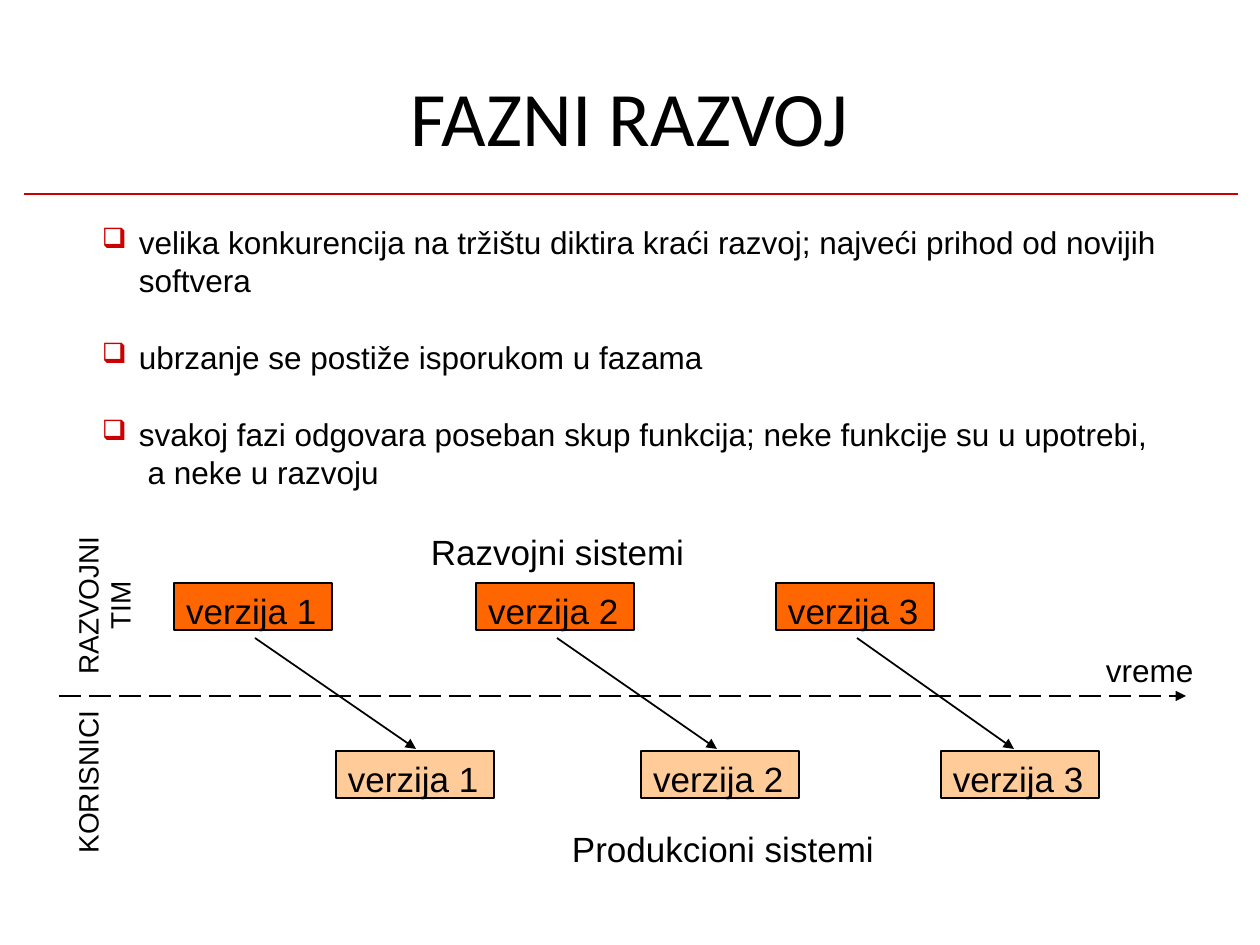
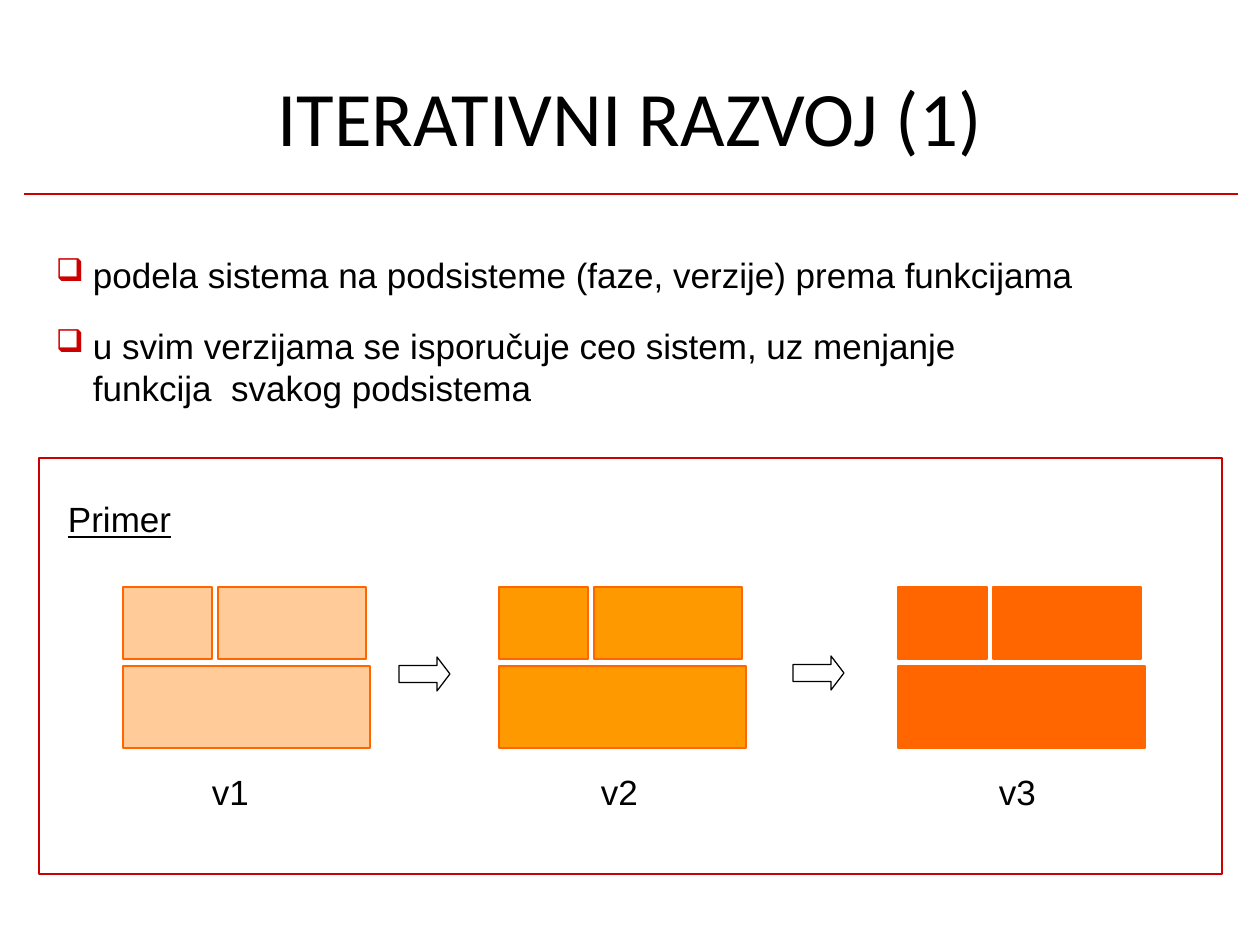
from lxml.etree import SubElement
from pptx import Presentation
from pptx.dml.color import RGBColor
from pptx.enum.dml import MSO_LINE
from pptx.enum.shapes import MSO_CONNECTOR, MSO_SHAPE
from pptx.enum.text import MSO_ANCHOR, PP_ALIGN
from pptx.oxml.ns import qn
from pptx.util import Emu, Pt

BLACK = RGBColor(0x00, 0x00, 0x00)
WHITE = RGBColor(0xFF, 0xFF, 0xFF)
RED = RGBColor(0xCC, 0x00, 0x00)
ORANGE = RGBColor(0xFF, 0x66, 0x00)
AMBER = RGBColor(0xFF, 0x99, 0x00)
PEACH = RGBColor(0xFF, 0xCC, 0x99)

PHASED_TITLE = "FAZNI RAZVOJ"
PHASED_POINTS = [
    "velika konkurencija na tržištu diktira kraći razvoj; najveći prihod od novijih\vsoftvera",
    "ubrzanje se postiže isporukom u fazama",
    "svakoj fazi odgovara poseban skup funkcija; neke funkcije su u upotrebi,\v a neke u razvoju",
]
PHASED_LABELS = [
    ("Razvojni sistemi", (431, 530, 300, 44), 20),
    ("Produkcioni sistemi", (572, 827, 305, 44), 20),
    ("vreme", (1106, 651, 91, 39), 18),
]
SIDE_LABELS = [
    ("RAZVOJNI\nTIM", (72, 535, 64, 141)),
    ("KORISNICI", (72, 709, 30, 146)),
]
VERSIONS = [
    ("verzija 1", 174, 336, 416),
    ("verzija 2", 476, 641, 717),
    ("verzija 3", 776, 941, 1014),
]
VERSION_SIZE = (158, 47)
DEVELOPMENT_TOP, PRODUCTION_TOP = 583, 751
TIME_AXIS = (59, 696, 1186, 696)

ITERATIVE_TITLE = "ITERATIVNI RAZVOJ (1)"
ITERATIVE_POINTS = [
    "podela sistema na podsisteme (faze, verzije) prema funkcijama",
    "u svim verzijama se isporučuje ceo sistem, uz menjanje\vfunkcija  svakog podsistema",
]
EXAMPLE_FRAME = (39, 458, 1183, 416)
ITERATIONS = [
    ("v1", PEACH, 123, 212),
    ("v2", AMBER, 499, 601),
    ("v3", ORANGE, 898, 999),
]
SUBSYSTEMS = [(0, 0, 89, 72), (95, 0, 148, 72), (0, 79, 247, 82)]
SUBSYSTEMS_TOP = 587
STEP_ARROWS = [(399, 657, 51, 34), (793, 656, 51, 34)]


def px(length):
    return Emu(round(length * 914400 / 126))


def add_bullet(para, percent):
    properties = para._p.get_or_add_pPr()
    properties.set("marL", str(px(39)))
    properties.set("indent", str(px(-37)))
    color = SubElement(properties, qn("a:buClr"))
    SubElement(color, qn("a:srgbClr"), val=str(RED))
    SubElement(properties, qn("a:buSzPct"), val=str(percent * 1000))
    SubElement(properties, qn("a:buChar"), char="❑")


def write(shape, text, size=20, font="Arial", align=PP_ALIGN.LEFT, anchor=MSO_ANCHOR.TOP,
          top_inset=0, left_inset=0, leading=None, gap=0, bullet=None,
          underline=None, vertical=False):
    frame = shape.text_frame
    frame.word_wrap = True
    frame.vertical_anchor = anchor
    frame.margin_left, frame.margin_top = px(left_inset), px(top_inset)
    frame.margin_right = frame.margin_bottom = 0
    if vertical:
        shape.element.txBody.bodyPr.set("vert", "vert270")
    for index, line in enumerate(text.split("\n")):
        para = frame.add_paragraph() if index else frame.paragraphs[0]
        para.text = line
        para.alignment = align
        if leading:
            para.line_spacing = Pt(leading)
        if gap and index:
            para.space_before = Pt(gap)
        if bullet:
            add_bullet(para, bullet)
        for span in para.runs:
            span.font.size = Pt(size)
            span.font.name = font
            span.font.color.rgb = BLACK
            span.font.underline = underline


def add_text(page, text, area, **style):
    box = page.shapes.add_textbox(*map(px, area))
    write(box, text, **style)
    return box


def add_block(page, area, fill=None, line=BLACK, kind=MSO_SHAPE.RECTANGLE):
    block = page.shapes.add_shape(kind, *map(px, area))
    block.shadow.inherit = False
    if fill is None:
        block.fill.background()
    else:
        block.fill.solid()
        block.fill.fore_color.rgb = fill
    block.line.color.rgb = line
    block.line.width = Pt(0.72)
    return block


def add_line(page, ends, color=BLACK, width=1, dash=None, arrow=False):
    connector = page.shapes.add_connector(MSO_CONNECTOR.STRAIGHT, *map(px, ends))
    connector.line.color.rgb = color
    connector.line.width = Pt(width)
    if dash:
        connector.line.dash_style = dash
    properties = connector.element.spPr
    if arrow:
        SubElement(properties.find(qn("a:ln")), qn("a:tailEnd"), type="triangle")
    SubElement(properties, qn("a:effectLst"))


def add_page(deck, title):
    page = deck.slides.add_slide(deck.slide_layouts[6])
    add_text(page, title, (63, 69, 1134, 93), size=44, font="Calibri",
             align=PP_ALIGN.CENTER, anchor=MSO_ANCHOR.MIDDLE)
    add_line(page, (24, 194, 1238, 194), RED, 0.96)
    return page


def build_phased(deck):
    page = add_page(deck, PHASED_TITLE)
    add_text(page, "\n".join(PHASED_POINTS), (100, 222, 1070, 270),
             size=18, leading=21.9, gap=22.1, bullet=89)
    for text, area, size in PHASED_LABELS:
        add_text(page, text, area, size=size)
    for text, area in SIDE_LABELS:
        add_text(page, text, area, size=16, leading=18.4, align=PP_ALIGN.CENTER, vertical=True)
    for name, development_left, production_left, tip in VERSIONS:
        for left, top, fill in ((development_left, DEVELOPMENT_TOP, ORANGE),
                                (production_left, PRODUCTION_TOP, PEACH)):
            block = add_block(page, (left, top, *VERSION_SIZE), fill)
            write(block, name, top_inset=6, left_inset=12)
        add_line(page, (development_left + 81, 638, tip, 749), arrow=True)
    add_line(page, TIME_AXIS, width=1.56, dash=MSO_LINE.LONG_DASH, arrow=True)


def build_iterative(deck):
    page = add_page(deck, ITERATIVE_TITLE)
    add_text(page, "\n".join(ITERATIVE_POINTS), (54, 253, 1060, 160),
             leading=24, gap=16.8, bullet=90)
    add_block(page, EXAMPLE_FRAME, line=RED)
    add_text(page, "Primer", (68, 498, 150, 43), leading=23.8, underline=True)
    for name, fill, left, label_left in ITERATIONS:
        for x, y, width, height in SUBSYSTEMS:
            add_block(page, (left + x, SUBSYSTEMS_TOP + y, width, height), fill, ORANGE)
        add_text(page, name, (label_left, 771, 40, 43), leading=23.8)
    for area in STEP_ARROWS:
        arrow = add_block(page, area, WHITE, kind=MSO_SHAPE.RIGHT_ARROW)
        arrow.adjustments[0] = 0.5
        arrow.adjustments[1] = 0.38


def main():
    deck = Presentation()
    deck.slide_width, deck.slide_height = px(1260), px(945)
    build_phased(deck)
    build_iterative(deck)
    deck.save("out.pptx")


if __name__ == "__main__":
    main()
